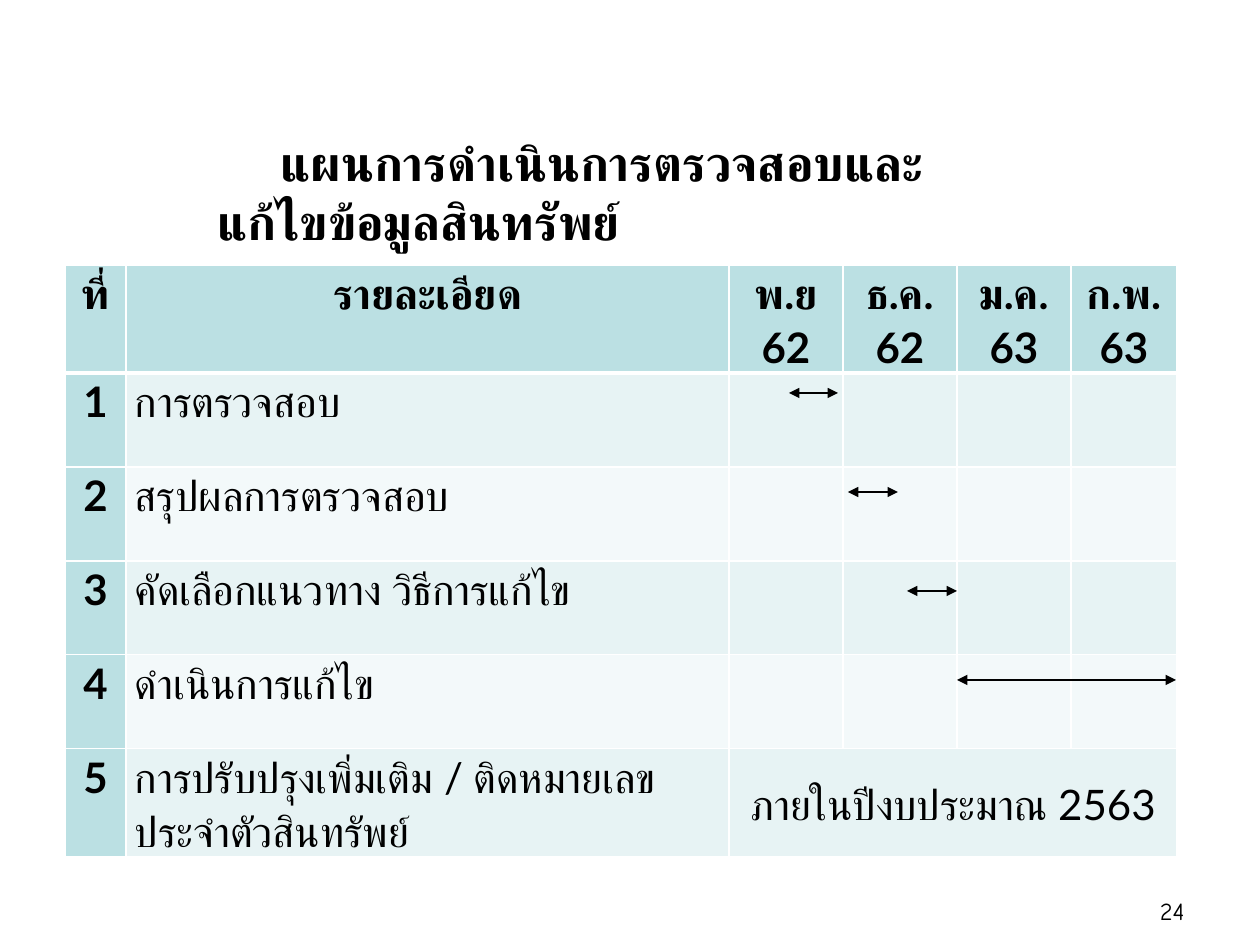
from dataclasses import dataclass

from lxml.etree import SubElement
from pptx import Presentation
from pptx.dml.color import RGBColor
from pptx.enum.shapes import MSO_CONNECTOR
from pptx.enum.text import MSO_ANCHOR, PP_ALIGN
from pptx.oxml.ns import qn
from pptx.util import Pt

TITLE = "แผนการดำเนินการตรวจสอบและแก้ไขข้อมูลสินทรัพย์"
HEADINGS = ["ที่", "รายละเอียด", "พ.ย 62", "ธ.ค. 62", "ม.ค. 63", "ก.พ.63"]
TASKS = [
    "การตรวจสอบ",
    "สรุปผลการตรวจสอบ",
    "คัดเลือกแนวทาง วิธีการแก้ไข",
    "ดำเนินการแก้ไข",
    "การปรับปรุงเพิ่มเติม / ติดหมายเลขประจำตัวสินทรัพย์",
]
DEADLINE = "ภายในปีงบประมาณ 2563"
PAGE_NUMBER = "24"

# start x, end x, y, line width in points
PERIODS = [
    (789, 838, 393, 0.75),
    (848, 898, 492, 0.75),
    (907, 957, 591, 0.75),
    (957, 1176, 680, 1.25),
]

TABLE_LEFT, TABLE_TOP = 65, 265
COLUMN_WIDTHS = [61, 603, 114, 114, 114, 106]
ROW_HEIGHTS = [107, 94, 94, 94, 94, 108]
FIRST_MONTH = 2


@dataclass(frozen=True)
class Theme:
    ink: str = "000000"
    border: str = "FFFFFF"
    header: str = "BBE0E3"
    bands: tuple = ("E7F3F4", "F3F9FA")
    font: str = "Lato"
    number_font: str = "Comic Neue"
    title_size: int = 28
    table_size: int = 24
    number_size: int = 14


THEME = Theme()


def px(length):
    return round(length * 914400 / 126)


def write(frame, text, size=THEME.table_size, font=THEME.font, bold=False,
          align=PP_ALIGN.LEFT, anchor=MSO_ANCHOR.TOP, indent=0,
          line_spacing=None, space_after=None):
    frame.word_wrap = True
    frame.vertical_anchor = anchor
    paragraph = frame.paragraphs[0]
    paragraph.alignment = align
    paragraph.line_spacing = line_spacing
    paragraph.space_after = space_after
    if indent:
        paragraph._p.get_or_add_pPr().set("indent", str(px(indent)))
    run = paragraph.add_run()
    run.text = text
    run.font.size = Pt(size)
    run.font.bold = bold
    run.font.color.rgb = RGBColor.from_string(THEME.ink)
    run.font.name = font
    # Thai takes its typeface from the complex-script slot
    SubElement(run._r.get_or_add_rPr(), qn("a:cs"), typeface=font)


def add_text(slide, left, top, width, height, text, **text_format):
    box = slide.shapes.add_textbox(px(left), px(top), px(width), px(height))
    write(box.text_frame, text, **text_format)


def style_cell(cell, fill, bottom=1):
    """Border lines come before the fill in the cell properties."""
    properties = cell._tc.get_or_add_tcPr()
    for side, width in (("L", 1), ("R", 1), ("T", 1), ("B", bottom)):
        line = SubElement(properties, qn(f"a:ln{side}"), w=str(Pt(width)))
        color = SubElement(line, qn("a:solidFill"))
        SubElement(color, qn("a:srgbClr"), val=THEME.border)
    cell.fill.solid()
    cell.fill.fore_color.rgb = RGBColor.from_string(fill)
    cell.margin_left = cell.margin_right = px(9)
    cell.margin_top = cell.margin_bottom = 0


def write_cell(cell, text, anchor=MSO_ANCHOR.TOP, **text_format):
    write(cell.text_frame, text, anchor=None, line_spacing=1.07,
          space_after=Pt(8), **text_format)
    cell.vertical_anchor = anchor


def add_schedule(slide):
    table = slide.shapes.add_table(
        len(ROW_HEIGHTS), len(COLUMN_WIDTHS), px(TABLE_LEFT), px(TABLE_TOP),
        px(sum(COLUMN_WIDTHS)), px(sum(ROW_HEIGHTS))).table
    table.first_row = table.horz_banding = False
    for column, width in zip(table.columns, COLUMN_WIDTHS):
        column.width = px(width)
    for row, height in zip(table.rows, ROW_HEIGHTS):
        row.height = px(height)

    for column, heading in enumerate(HEADINGS):
        cell = table.cell(0, column)
        style_cell(cell, THEME.header, bottom=3)
        write_cell(cell, heading, bold=True, align=PP_ALIGN.CENTER)

    for number, task in enumerate(TASKS, start=1):
        band = THEME.bands[(number - 1) % 2]
        for column in range(len(HEADINGS)):
            style_cell(table.cell(number, column), band if column else THEME.header)
        write_cell(table.cell(number, 0), str(number), bold=True,
                   align=PP_ALIGN.CENTER)
        write_cell(table.cell(number, 1), task)

    deadline = table.cell(len(TASKS), FIRST_MONTH)
    deadline.merge(table.cell(len(TASKS), len(HEADINGS) - 1))
    write_cell(deadline, DEADLINE, anchor=MSO_ANCHOR.MIDDLE, align=PP_ALIGN.CENTER)


def add_period(slide, start, end, y, width):
    arrow = slide.shapes.add_connector(
        MSO_CONNECTOR.STRAIGHT, px(start), px(y), px(end), px(y))
    arrow.line.color.rgb = RGBColor.from_string(THEME.ink)
    arrow.line.width = Pt(width)
    for tip in ("a:headEnd", "a:tailEnd"):
        SubElement(arrow.line._get_or_add_ln(), qn(tip), type="triangle")
    SubElement(arrow._element.spPr, qn("a:effectLst"))


def main():
    presentation = Presentation()
    presentation.slide_width, presentation.slide_height = px(1260), px(945)
    slide = presentation.slides.add_slide(presentation.slide_layouts[6])
    add_text(slide, 1047, 890, 150, 37, PAGE_NUMBER, size=THEME.number_size,
             font=THEME.number_font, align=PP_ALIGN.RIGHT)
    add_schedule(slide)
    for period in PERIODS:
        add_period(slide, *period)
    add_text(slide, 205, 155, 838, 72, TITLE, size=THEME.title_size, bold=True,
             anchor=MSO_ANCHOR.MIDDLE, indent=63)
    presentation.save("out.pptx")


if __name__ == "__main__":
    main()
